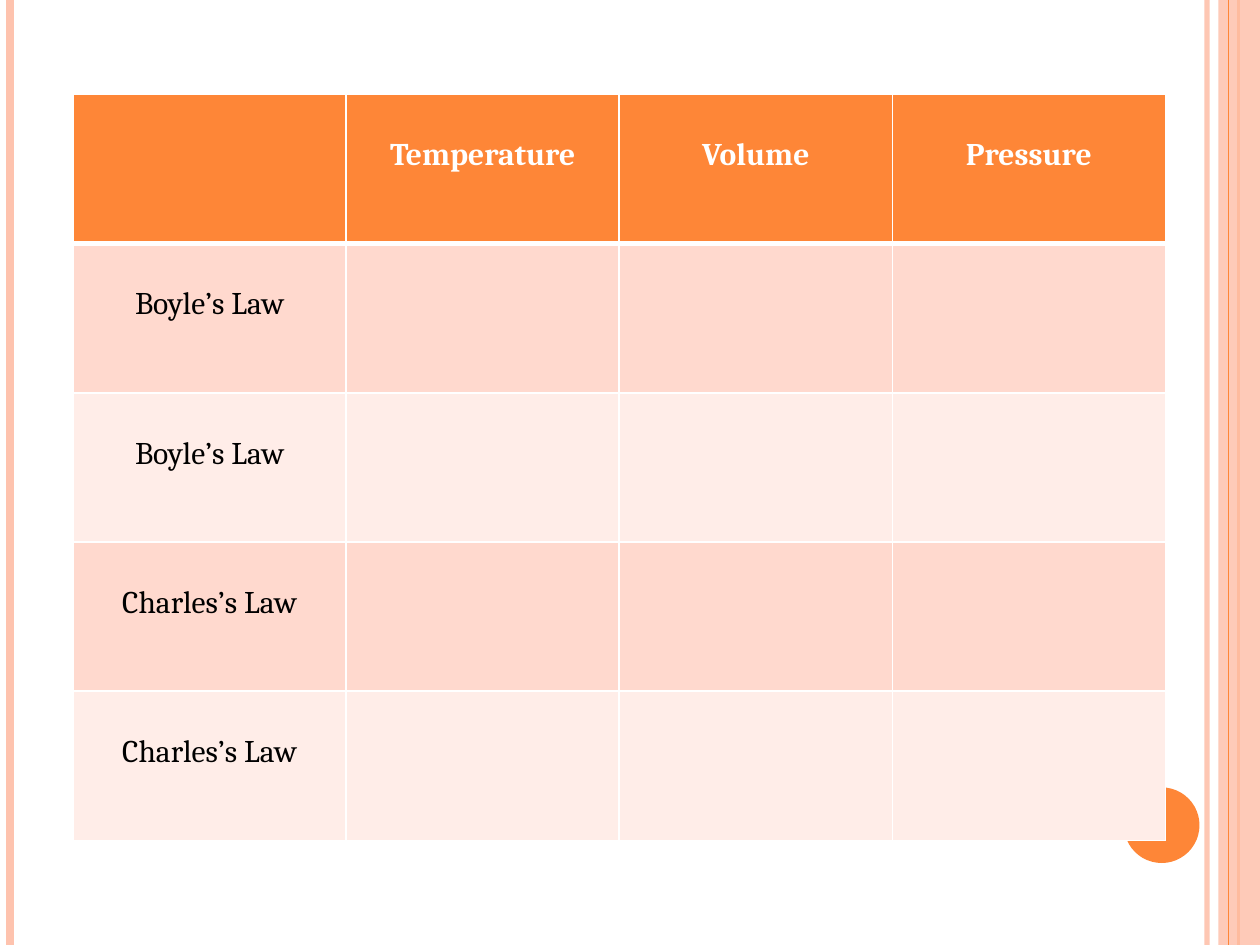
from typing import NamedTuple

from lxml.etree import SubElement
from pptx import Presentation
from pptx.dml.color import RGBColor
from pptx.enum.shapes import MSO_CONNECTOR, MSO_SHAPE
from pptx.enum.text import PP_ALIGN
from pptx.oxml.ns import qn
from pptx.util import Inches, Pt

WIDTH, HEIGHT = Inches(10), Inches(7.5)
ORANGE, PEACH, WHITE, BLACK = "FE8637", "FEC3AE", "FFFFFF", "000000"
BANDS = ("FFD9CE", "FFEDE8")
HEADINGS = ("", "Temperature", "Volume", "Pressure")
LAWS = ("Boyle’s Law", "Boyle’s Law", "Charles’s Law", "Charles’s Law")


class Stripe(NamedTuple):
    x: float
    color: str
    points: float
    opacity: int = 100


class Block(NamedTuple):
    kind: MSO_SHAPE
    left: float
    top: float
    width: float
    height: float
    color: str
    opacity: int = 100


class CellStyle(NamedTuple):
    fill: str
    text: str
    bold: bool
    bottom_points: float


DECORATION = (
    Stripe(0.958, PEACH, 3, 93),
    Stripe(0.008, PEACH, 4.5),
    Stripe(0.983, ORANGE, 1.5),
    Block(MSO_SHAPE.RECTANGLE, 0.967, 0, 0.033, 1, PEACH, 87),
    Stripe(0.975, ORANGE, 0.75),
    Block(MSO_SHAPE.OVAL, 0.892, 0.8333, 0.06, 0.08, ORANGE),
)


def rgb(color: str) -> RGBColor:
    return RGBColor.from_string(color)


def paint(fill, color: str, opacity: int = 100) -> None:
    fill.solid()
    fill.fore_color.rgb = rgb(color)
    if opacity < 100:
        for node in fill._xPr.iter(qn("a:srgbClr")):
            SubElement(node, qn("a:alpha"), val=str(opacity * 1000))


def draw_stripe(slide, stripe: Stripe) -> None:
    x = int(WIDTH * stripe.x)
    line = slide.shapes.add_connector(MSO_CONNECTOR.STRAIGHT, x, 0, x, HEIGHT)
    line.line.width = Pt(stripe.points)
    paint(line.line.fill, stripe.color, stripe.opacity)
    SubElement(line._element.spPr, qn("a:effectLst"))


def draw_block(slide, block: Block) -> None:
    shape = slide.shapes.add_shape(
        block.kind,
        int(WIDTH * block.left), int(HEIGHT * block.top),
        int(WIDTH * block.width), int(HEIGHT * block.height),
    )
    shape.shadow.inherit = False
    shape.line.fill.background()
    paint(shape.fill, block.color, block.opacity)


def set_borders(cell, bottom_points: float, top_points: float) -> None:
    properties = cell._tc.get_or_add_tcPr()
    widths = {"lnL": 1, "lnR": 1, "lnT": top_points, "lnB": bottom_points}
    for side, points in widths.items():
        border = SubElement(properties, qn(f"a:{side}"), w=str(Pt(points)))
        fill = SubElement(border, qn("a:solidFill"))
        SubElement(fill, qn("a:srgbClr"), val=WHITE)


def write_cell(cell, text: str, style: CellStyle, top_points: float) -> None:
    set_borders(cell, style.bottom_points, top_points)
    paint(cell.fill, style.fill)
    cell.margin_top = Inches(0.34)
    paragraph = cell.text_frame.paragraphs[0]
    paragraph.alignment = PP_ALIGN.CENTER
    paragraph.font.size = Pt(18)
    if text:
        run = paragraph.add_run()
        run.text = text
        formats = {"name": "Cambria", "size": Pt(18), "bold": style.bold}
        for name, value in formats.items():
            setattr(run.font, name, value)
        run.font.color.rgb = rgb(style.text)


def draw_table(slide) -> None:
    rows = [HEADINGS] + [(law, "", "", "") for law in LAWS]
    table = slide.shapes.add_table(
        len(rows), len(HEADINGS),
        Inches(0.58), Inches(0.75), Inches(8.67), Inches(5.92),
    ).table
    header = CellStyle(ORANGE, WHITE, True, 3)
    bands = [CellStyle(color, BLACK, False, 1) for color in BANDS]
    for row, texts in enumerate(rows):
        style = bands[(row - 1) % 2] if row else header
        top_points = header.bottom_points if row == 1 else 1
        for column, text in enumerate(texts):
            write_cell(table.cell(row, column), text, style, top_points)


def main() -> None:
    presentation = Presentation()
    presentation.slide_width, presentation.slide_height = WIDTH, HEIGHT
    slide = presentation.slides.add_slide(presentation.slide_layouts[6])
    paint(slide.background.fill, WHITE)
    for item in DECORATION:
        if isinstance(item, Stripe):
            draw_stripe(slide, item)
        else:
            draw_block(slide, item)
    draw_table(slide)
    presentation.save("out.pptx")


if __name__ == "__main__":
    main()
